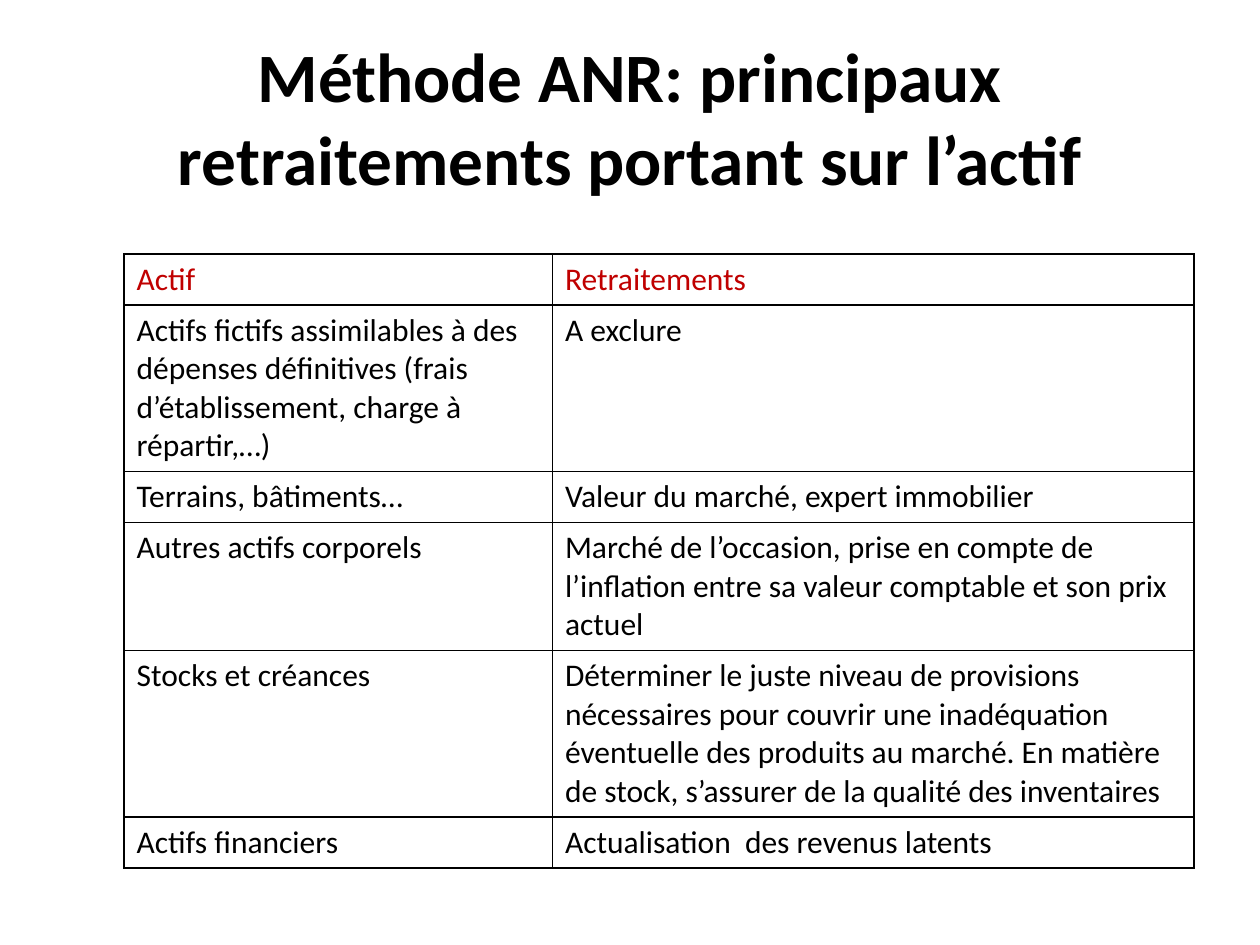
import dataclasses

import lxml.etree
import pptx
import pptx.dml.color
import pptx.enum.text
import pptx.oxml.ns
import pptx.table
import pptx.text.text
import pptx.util

Pt = pptx.util.Pt
RGBColor = pptx.dml.color.RGBColor

BLACK = RGBColor(0x00, 0x00, 0x00)
RED = RGBColor(0xC0, 0x00, 0x00)
FONT = "Calibri"
COLUMN_WIDTHS = (Pt(244.8), Pt(366.5))
ROW_HEIGHT = Pt(29.2)
TABLE_HEIGHT = Pt(347)
BORDER_WIDTH = Pt(1)


@dataclasses.dataclass(frozen=True)
class Adjustment:
    asset: str
    treatment: str
    color: RGBColor = BLACK


ADJUSTMENTS = (
    Adjustment("Actif", "Retraitements", RED),
    Adjustment(
        "Actifs fictifs assimilables à des dépenses définitives "
        "(frais d’établissement, charge à répartir,…)",
        "A exclure",
    ),
    Adjustment("Terrains, bâtiments…", "Valeur du marché, expert immobilier"),
    Adjustment(
        "Autres actifs corporels",
        "Marché de l’occasion, prise en compte de l’inflation entre "
        "sa valeur comptable et son prix actuel",
    ),
    Adjustment(
        "Stocks et créances",
        "Déterminer le juste niveau de provisions nécessaires pour couvrir "
        "une inadéquation éventuelle des produits au marché. En matière de "
        "stock, s’assurer de la qualité des inventaires",
    ),
    Adjustment("Actifs financiers", "Actualisation  des revenus latents"),
)


def write_text(frame: pptx.text.text.TextFrame, text: str, size: float,
               color: RGBColor, bold: bool = False) -> None:
    frame.text = text
    font = frame.paragraphs[0].runs[0].font
    font.name = FONT
    font.size = Pt(size)
    font.bold = bold
    font.color.rgb = color


def add_borders(cell: pptx.table._Cell) -> None:
    qn = pptx.oxml.ns.qn
    properties = cell._tc.get_or_add_tcPr()
    for position, side in enumerate(("lnL", "lnR", "lnT", "lnB")):
        line = lxml.etree.Element(qn(f"a:{side}"), w=str(BORDER_WIDTH))
        fill = lxml.etree.SubElement(line, qn("a:solidFill"))
        lxml.etree.SubElement(fill, qn("a:srgbClr"), val=str(BLACK))
        properties.insert(position, line)


def add_adjustment_table(slide: pptx.slide.Slide) -> None:
    frame = slide.shapes.add_table(
        len(ADJUSTMENTS), len(COLUMN_WIDTHS), Pt(70.9), Pt(145.1),
        sum(COLUMN_WIDTHS), TABLE_HEIGHT)
    table = frame.table
    table.first_row = False
    table.horz_banding = False
    for column, width in zip(table.columns, COLUMN_WIDTHS):
        column.width = width
    for row, adjustment in zip(table.rows, ADJUSTMENTS):
        row.height = ROW_HEIGHT
        for cell, text in zip(row.cells, (adjustment.asset, adjustment.treatment)):
            write_text(cell.text_frame, text, 18, adjustment.color)
            cell.fill.background()
            add_borders(cell)
    # Rows grow with their text, so the frame is taller than their minimum heights.
    frame.height = TABLE_HEIGHT


def add_title(slide: pptx.slide.Slide) -> None:
    title = slide.shapes.title
    title.left, title.top = Pt(36), Pt(21.6)
    title.width, title.height = Pt(648), Pt(90)
    write_text(title.text_frame,
               "Méthode ANR: principaux retraitements portant sur l’actif",
               39.6, BLACK, bold=True)
    title.text_frame.vertical_anchor = pptx.enum.text.MSO_ANCHOR.MIDDLE
    title.text_frame.paragraphs[0].alignment = pptx.enum.text.PP_ALIGN.CENTER


def main() -> None:
    presentation = pptx.Presentation()
    presentation.slide_width = Pt(720)
    presentation.slide_height = Pt(540)
    title_only = presentation.slide_layouts.get_by_name("Title Only")
    slide = presentation.slides.add_slide(title_only)
    add_title(slide)
    add_adjustment_table(slide)
    presentation.save("out.pptx")


if __name__ == "__main__":
    main()
